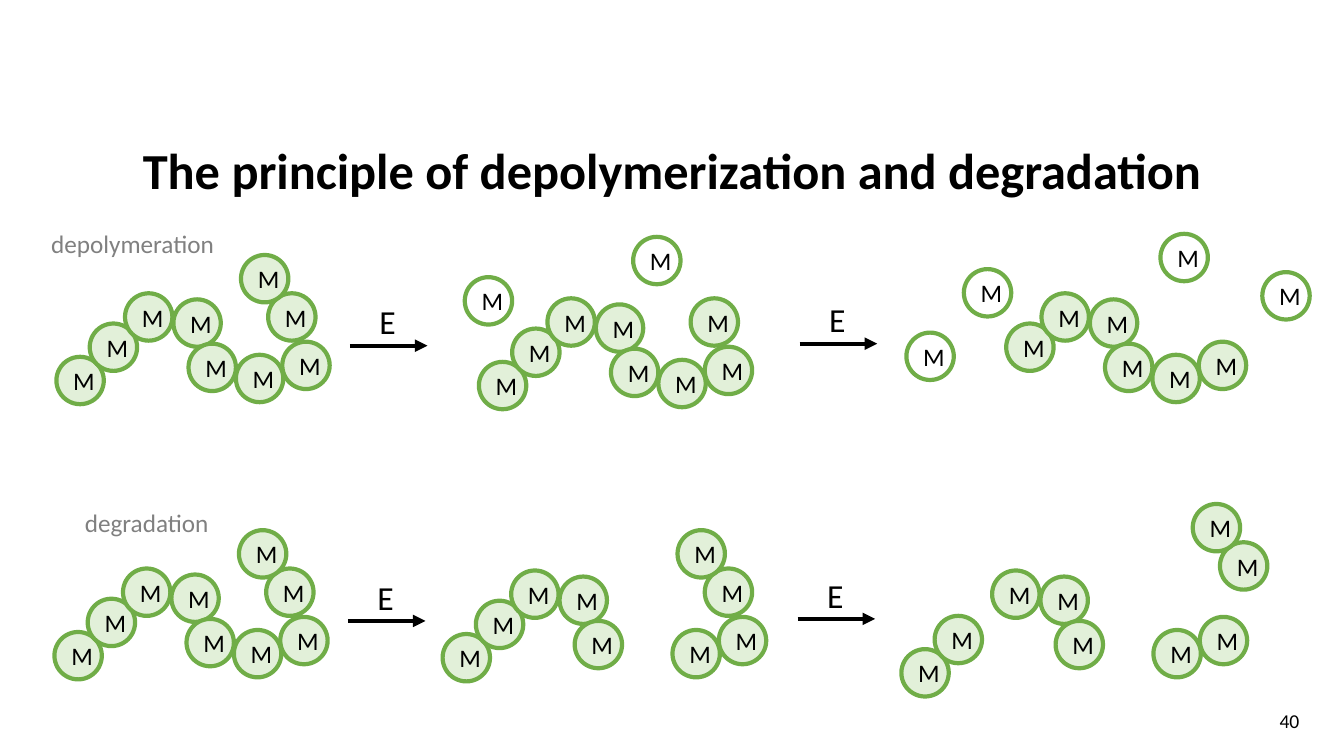
from dataclasses import dataclass

from lxml.etree import SubElement
from pptx import Presentation
from pptx.dml.color import RGBColor
from pptx.enum.shapes import MSO_CONNECTOR, MSO_SHAPE
from pptx.enum.text import MSO_ANCHOR, PP_ALIGN
from pptx.oxml.ns import qn
from pptx.util import Emu, Pt


@dataclass(frozen=True)
class Theme:
    font: str = "Calibri"
    ink: str = "000000"
    muted: str = "808080"
    bead_line: str = "70AD47"
    bound_fill: str = "E2F0D9"
    free_fill: str = "FFFFFF"
    title_size: int = 36
    enzyme_size: int = 24
    body_size: int = 18
    number_size: int = 14
    line_width: int = 3


THEME = Theme()
EMU_PER_PX = 9144
BEAD_SIZE = 47
ARROW_LENGTH = 77
CHAIN = [(0, 0), (33, -33), (68, -63), (116, -57), (131, -13),
         (178, -2), (224, -15), (210, -63), (183, -101)]

POLYMERS = [
    (56, 354, 0, 9),
    (475, 359, 0, 8),
    (965, 354, 1, 7),
    (54, 627, 0, 9),
    (439, 629, 0, 5),
    (489, 627, 5, 9),
    (894, 644, 0, 2),
    (916, 629, 2, 5),
    (966, 627, 5, 7),
    (1000, 601, 7, 9),
]
FREE_MONOMERS = [(461, 275), (628, 235), (956, 267), (899, 330), (1252, 270), (1151, 232)]
REACTIONS = [(347, 343), (793, 341), (345, 616), (791, 614)]


def px(length):
    return Emu(length * EMU_PER_PX)


def color(value):
    return RGBColor.from_string(value)


def write(shape, text, size=THEME.body_size, ink=THEME.ink, bold=False,
          anchor=MSO_ANCHOR.TOP, line_spacing=None):
    frame = shape.text_frame
    frame.word_wrap = True
    frame.vertical_anchor = anchor
    paragraph = frame.paragraphs[0]
    paragraph.alignment = PP_ALIGN.CENTER
    paragraph.line_spacing = line_spacing
    run = paragraph.add_run()
    run.text = text
    run.font.name = THEME.font
    run.font.size = Pt(size)
    run.font.bold = bold
    run.font.color.rgb = color(ink)


def add_text(slide, text, left, top, width, height, **text_format):
    box = slide.shapes.add_textbox(px(left), px(top), px(width), px(height))
    write(box, text, **text_format)


def add_bead(slide, left, top, fill=THEME.bound_fill):
    bead = slide.shapes.add_shape(
        MSO_SHAPE.OVAL, px(left), px(top), px(BEAD_SIZE), px(BEAD_SIZE))
    bead.shadow.inherit = False
    bead.fill.solid()
    bead.fill.fore_color.rgb = color(fill)
    bead.line.color.rgb = color(THEME.bead_line)
    bead.line.width = Pt(THEME.line_width)
    write(bead, "M", anchor=MSO_ANCHOR.MIDDLE)


def add_polymer(slide, left, top, first, stop):
    for across, down in CHAIN[first:stop]:
        add_bead(slide, left + across, top + down)


def add_reaction(slide, left, top):
    arrow = slide.shapes.add_connector(
        MSO_CONNECTOR.STRAIGHT, px(left), px(top), px(left + ARROW_LENGTH), px(top))
    arrow.line.color.rgb = color(THEME.ink)
    arrow.line.width = Pt(THEME.line_width)
    SubElement(arrow.line._get_or_add_ln(), qn("a:tailEnd"), type="triangle")
    SubElement(arrow._element.spPr, qn("a:effectLst"))
    add_text(slide, "E", left, top - 49, 75, 50, size=THEME.enzyme_size)


def main():
    presentation = Presentation()
    presentation.slide_width = px(1333)
    presentation.slide_height = px(750)
    slide = presentation.slides.add_slide(presentation.slide_layouts[6])

    add_text(slide, "40", 1251, 695, 56, 40,
             size=THEME.number_size, anchor=MSO_ANCHOR.MIDDLE)
    add_text(slide, "The principle of depolymerization and degradation", 92, 99, 1150, 145,
             size=THEME.title_size, bold=True, anchor=MSO_ANCHOR.MIDDLE, line_spacing=0.9)
    for polymer in POLYMERS:
        add_polymer(slide, *polymer)
    for left, top in FREE_MONOMERS:
        add_bead(slide, left, top, fill=THEME.free_fill)
    for left, top in REACTIONS:
        add_reaction(slide, left, top)
    add_text(slide, "depolymeration", 21, 222, 221, 57, ink=THEME.muted)
    add_text(slide, "degradation", 35, 498, 221, 40, ink=THEME.muted)

    presentation.save("out.pptx")


if __name__ == "__main__":
    main()
